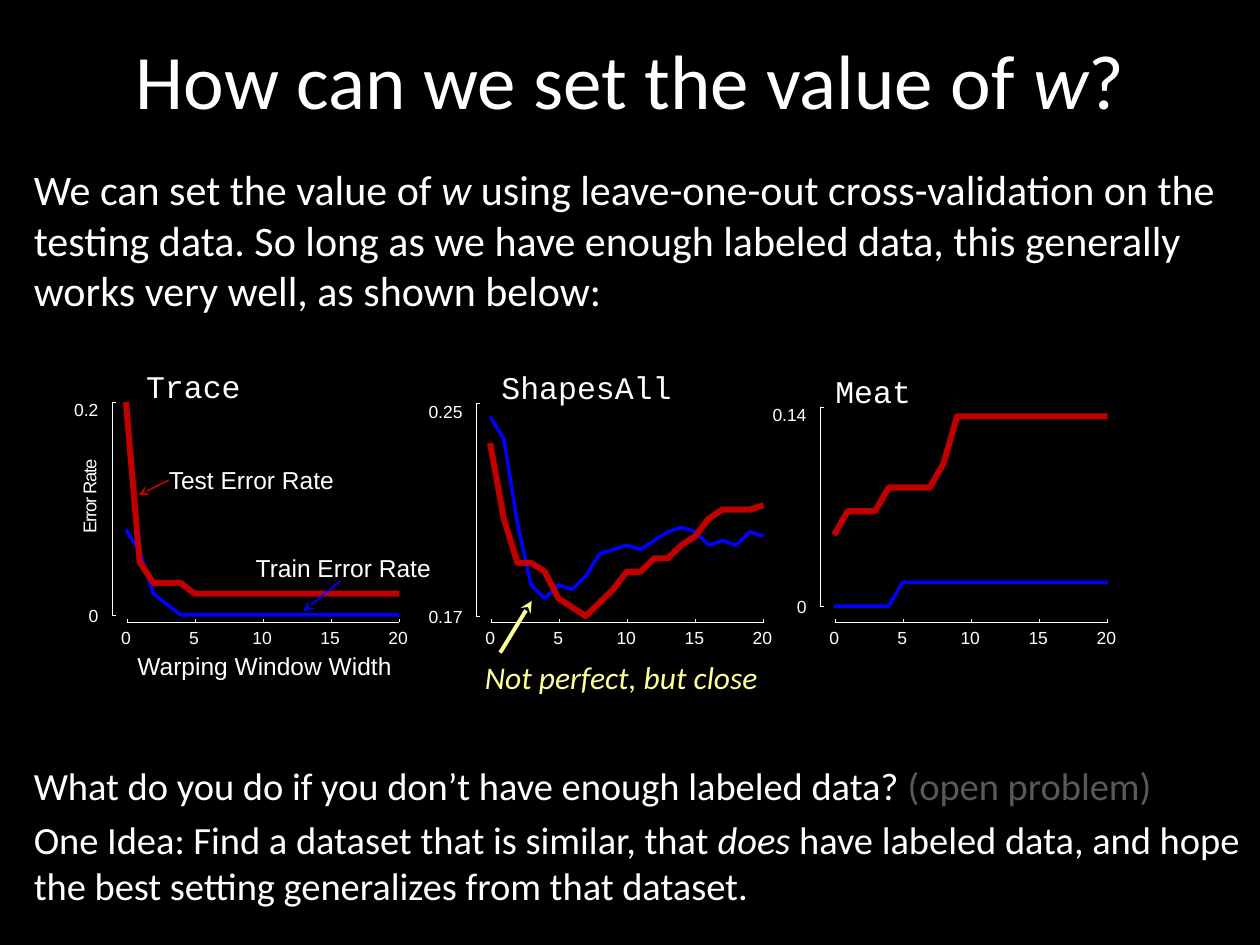
from lxml.etree import SubElement
from pptx import Presentation
from pptx.dml.color import RGBColor
from pptx.enum.shapes import MSO_CONNECTOR as Link
from pptx.enum.text import MSO_ANCHOR as Anchor, PP_ALIGN as Align
from pptx.oxml.ns import qn
from pptx.util import Inches, Pt

COLORS = {"back": "000000", "text": "FFFFFF", "test": "C00000",
          "train": "0000FF", "note": "FFFF99", "dim": "595959"}
TICK = 0.03
STEP = 0.54          # five units of window width
AXIS_GAP = 0.12      # from the y axis to the start of the x axis
TAG_W, TAG_H = 0.32, 0.17    # tick label

# name, box down to the x axis, name indent, y axis height, lowest and highest
# rate, data set size, and mistakes beyond the lowest rate for w = 0 to 20
PANELS = [
    ("Trace", (0.89, 3.19, 2.28, 1.75), 0.27, 1.69, 0, 0.2, 100,
     [8, 6, 2, 1] + [0] * 17,
     [20, 5, 3, 3, 3] + [2] * 16),
    ("ShapesAll", (3.78, 3.2, 2.28, 1.74), 0.2, 1.69, 0.17, 0.25, 600,
     [45, 40, 21, 7, 4, 7, 6, 9, 14, 15, 16, 15, 17, 19, 20, 19, 16, 17, 16,
      19, 18],
     [39, 22, 12, 12, 10, 4, 2, 0, 3, 6, 10, 10, 13, 13, 16, 18, 22, 24, 24,
      24, 25]),
    ("Meat", (6.51, 3.23, 2.28, 1.71), 0.12, 1.58, 0, 0.14, 60,
     [0] * 5 + [1] * 16,
     [3, 4, 4, 4, 5, 5, 5, 5, 6] + [8] * 12),
]


def color(name):
    return RGBColor.from_string(COLORS[name])


def fill_par(par, runs, size, font="Calibri", align=Align.LEFT):
    """Write runs of (text, color name, italic) into a paragraph."""
    par.alignment = align
    for words, tint, slant in runs:
        run = par.add_run()
        run.text = words
        run.font.size, run.font.name = Pt(size), font
        run.font.color.rgb, run.font.italic = color(tint), slant


def add_box(slide, box, pad=True):
    shape = slide.shapes.add_textbox(*map(Inches, box))
    frame = shape.text_frame
    frame.word_wrap = True
    if not pad:
        frame.margin_left = frame.margin_right = 0
        frame.margin_top = frame.margin_bottom = 0
    return shape


def add_label(slide, words, box, size=14, font="Arial", align=Align.LEFT):
    shape = add_box(slide, box, pad=False)
    fill_par(shape.text_frame.paragraphs[0], [(words, "text", False)], size,
             font, align)
    return shape


def add_body(slide, box, pars, size):
    frame = add_box(slide, box).text_frame
    for i, runs in enumerate(pars):
        par = frame.add_paragraph() if i else frame.paragraphs[0]
        par.space_before = Pt(size * 0.2)
        fill_par(par, runs, size)


def add_line(slide, start, end, tint="text", width=0.38, arrow=False):
    line = slide.shapes.add_connector(Link.STRAIGHT,
                                      *map(Inches, (*start, *end)))
    line.line.color.rgb = color(tint)
    line.line.width = Pt(width)
    props = line._element.spPr
    if arrow:
        SubElement(props.find(qn("a:ln")), qn("a:tailEnd"), type="stealth")
    SubElement(props, qn("a:effectLst"))


def add_curve(slide, points, tint, width):
    spots = [(Inches(x), Inches(y)) for x, y in points]
    pen = slide.shapes.build_freeform(*spots[0])
    pen.add_line_segments(spots[1:], close=False)
    curve = pen.convert_to_shape()
    curve.shadow.inherit = False
    curve.fill.background()
    curve.line.color.rgb = color(tint)
    curve.line.width = Pt(width)


def add_axes(slide, box, high, rates):
    left, top, wide, tall = box
    floor, start = top + tall, left + AXIS_GAP
    add_line(slide, (left, top), (left, top + high))
    add_line(slide, (start, floor), (start + 4 * STEP, floor))
    for rate, y, rise in ((rates[0], top + high, 0.08), (rates[1], top, 0.02)):
        add_line(slide, (left, y), (left + TICK, y))
        add_label(slide, f"{rate:g}",
                  (left - 0.11 - TAG_W, y - rise, TAG_W, TAG_H), 10,
                  align=Align.RIGHT)
    for i in range(5):
        x = start + i * STEP
        add_line(slide, (x, floor), (x, floor - TICK))
        add_label(slide, str(5 * i),
                  (x - 0.01 - TAG_W / 2, floor + 0.04, TAG_W, TAG_H), 10,
                  align=Align.CENTER)


def add_panel(slide, name, box, indent, high, low, peak, size, train, test):
    """Draw one data set's error curves over its axes."""
    left, top, wide, tall = box
    add_axes(slide, box, high, (low, peak))
    add_label(slide, name, (left + indent, top - 0.28, 1.84, 0.3), 18,
              "Courier New")
    unit = high / (peak - low) / size
    start = left + 0.11
    step = (wide - 0.11) / 20
    for counts, tint, width in ((train, "train", 2), (test, "test", 3.5)):
        points = [(start + i * step, top + high - n * unit)
                  for i, n in enumerate(counts)]
        add_curve(slide, points, tint, width)


def add_legend(slide, box):
    """Name the axes and curves of the first panel."""
    left, top = box[:2]
    add_label(slide, "Warping Window Width",
              (left + 0.2, top + 1.98, 2.21, 0.24))
    add_label(slide, "Test Error Rate", (left + 0.45, top + 0.5, 1.66, 0.24))
    add_label(slide, "Train Error Rate", (left + 1.14, top + 1.2, 1.73, 0.24))
    add_line(slide, (left + 0.45, top + 0.62), (left + 0.21, top + 0.74),
             "test", 1, True)
    add_line(slide, (left + 1.81, top + 1.42), (left + 1.52, top + 1.66),
             "train", 1, True)
    side = add_label(slide, "Error Rate", (left - 0.58, top + 0.66, 0.8, 0.18),
                     10.5, align=Align.CENTER)
    side.rotation = 270
    run = side.text_frame.paragraphs[0].runs[0]
    run.font._element.set("spc", "-60")


def add_note(slide, box):
    left, top = box[:2]
    shape = add_box(slide, (left - 0.03, top + 1.97, 2.58, 0.4))
    fill_par(shape.text_frame.paragraphs[0],
             [("Not perfect, but close", "note", True)], 18)
    add_line(slide, (left + 0.19, top + 1.98), (left + 0.44, top + 1.57),
             "note", 2.25, True)


def add_title(slide, box):
    title = slide.shapes.title
    title.left, title.top, title.width, title.height = map(Inches, box)
    title.text_frame.vertical_anchor = Anchor.MIDDLE
    fill_par(title.text_frame.paragraphs[0],
             [("How can we set the value of ", "text", False),
              ("w", "text", True), ("?", "text", False)], 44,
             align=Align.CENTER)


def main():
    deck = Presentation()
    deck.slide_width, deck.slide_height = Inches(10), Inches(7.5)
    slide = deck.slides.add_slide(deck.slide_layouts[5])
    slide.background.fill.solid()
    slide.background.fill.fore_color.rgb = color("back")

    add_title(slide, (0.5, 0, 9, 1.25))
    add_body(slide, (0.17, 1.25, 9.58, 1.4), [[
        ("We can set the value of ", "text", False), ("w", "text", True),
        (" using leave-one-out cross-validation on the testing data. So long "
         "as we have enough labeled data, this generally works very well, as "
         "shown below:", "text", False)]], 24)
    for panel in PANELS:
        add_panel(slide, *panel)
    add_legend(slide, PANELS[0][1])
    add_note(slide, PANELS[1][1])
    add_body(slide, (0.17, 6, 9.83, 1.33), [
        [("What do you do if you don’t have enough labeled data? ", "text",
          False), ("(open problem)", "dim", False)],
        [("One Idea: Find a dataset that is similar, that ", "text", False),
         ("does", "text", True),
         (" have labeled data, and hope the best setting generalizes from "
          "that dataset.", "text", False)]], 22)
    deck.save("out.pptx")


if __name__ == "__main__":
    main()
